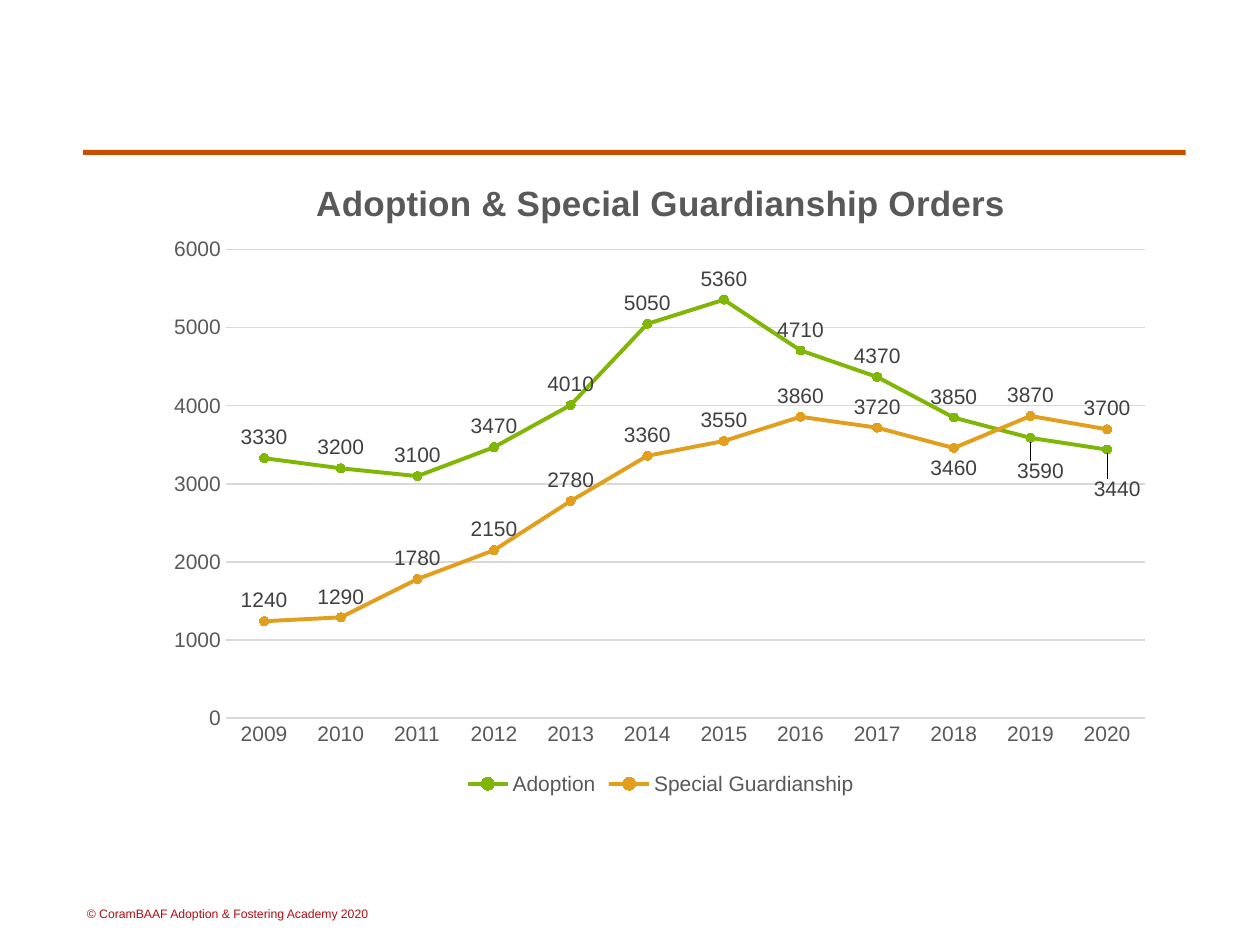
from lxml import etree
from pptx import Presentation
from pptx.chart.data import CategoryChartData
from pptx.dml.color import RGBColor
from pptx.enum.chart import (XL_CHART_TYPE, XL_LABEL_POSITION, XL_LEGEND_POSITION,
                             XL_MARKER_STYLE, XL_TICK_MARK)
from pptx.enum.shapes import MSO_SHAPE
from pptx.oxml.ns import qn
from pptx.util import Inches, Pt

LINE_MARKERS = XL_CHART_TYPE.LINE_MARKERS
ABOVE, BELOW = XL_LABEL_POSITION.ABOVE, XL_LABEL_POSITION.BELOW
LEGEND_BOTTOM = XL_LEGEND_POSITION.BOTTOM
CIRCLE = XL_MARKER_STYLE.CIRCLE
NO_TICKS = XL_TICK_MARK.NONE
RECTANGLE = MSO_SHAPE.RECTANGLE

FONT = "Arial"
COLORS = {"rule": "CA4E00", "copyright": "B20E10", "axis": "595959",
          "grid": "D9D9D9", "label": "404040",
          "Adoption": "80B606", "Special Guardianship": "E29F1D"}

YEARS = [str(year) for year in range(2009, 2021)]
ORDERS = {
    "Adoption": [3330, 3200, 3100, 3470, 4010, 5050,
                 5360, 4710, 4370, 3850, 3590, 3440],
    "Special Guardianship": [1240, 1290, 1780, 2150, 2780, 3360,
                             3550, 3860, 3720, 3460, 3870, 3700],
}
# Labels below the line: year -> (x, y) shift as a share of the chart size
LABELS_BELOW = {
    "Adoption": {"2019": (0.01, 0.02), "2020": (0.01, 0.03)},
    "Special Guardianship": {"2018": None},
}


def rgb(name):
    return RGBColor.from_string(COLORS[name])


def style_font(font, size, color, bold=False):
    font.name, font.size, font.bold = FONT, Pt(size), bold
    font.color.rgb = rgb(color)


def style_line(line, color, width):
    line.color.rgb = rgb(color)
    line.width = Pt(width)


def manual_layout(**values):
    layout = etree.Element(qn("c:layout"))
    manual = etree.SubElement(layout, qn("c:manualLayout"))
    for tag, value in values.items():
        etree.SubElement(manual, qn(f"c:{tag}")).set("val", str(value))
    return layout


def add_rule(slide):
    rule = slide.shapes.add_shape(RECTANGLE, Inches(0.66), Inches(1.19),
                                  Inches(8.75), Inches(0.04))
    rule.shadow.inherit = False
    rule.fill.solid()
    rule.fill.fore_color.rgb = rgb("rule")
    rule.line.fill.background()


def add_copyright(slide):
    box = slide.shapes.add_textbox(Inches(0.69), Inches(7.14), Inches(3.37), Inches(0.36))
    frame = box.text_frame
    frame.word_wrap = True
    frame.margin_left = frame.margin_right = frame.margin_top = frame.margin_bottom = 0
    paragraph = frame.paragraphs[0]
    paragraph.line_spacing = Pt(12)
    run = paragraph.add_run()
    run.text = "© CoramBAAF Adoption & Fostering Academy 2020"
    style_font(run.font, 7, "copyright")


def style_axes(chart):
    years, counts = chart.category_axis, chart.value_axis
    for axis in (years, counts):
        axis.major_tick_mark = axis.minor_tick_mark = NO_TICKS
        style_font(axis.tick_labels.font, 12, "axis")
    style_line(years.format.line, "grid", 0.75)
    counts.format.line.fill.background()
    counts.minimum_scale, counts.maximum_scale, counts.major_unit = 0, 6000, 1000
    style_line(counts.major_gridlines.format.line, "grid", 0.75)


def style_series(series):
    series.smooth = False
    style_line(series.format.line, series.name, 2.25)
    marker = series.marker
    marker.style, marker.size = CIRCLE, 5
    marker.format.fill.solid()
    marker.format.fill.fore_color.rgb = rgb(series.name)
    style_line(marker.format.line, series.name, 0.75)

    labels = series.data_labels
    labels.show_value = True
    labels.position = ABOVE
    style_font(labels.font, 12, "label")
    for year, shift in LABELS_BELOW[series.name].items():
        index = YEARS.index(year)
        label = series.points[index].data_label
        style_font(label.font, 12, "label")
        label.position = BELOW
        if shift:
            idx = series._element.xpath(f"c:dLbls/c:dLbl/c:idx[@val='{index}']")[0]
            idx.addnext(manual_layout(x=shift[0], y=shift[1]))


def add_orders_chart(slide):
    data = CategoryChartData()
    data.categories = YEARS
    for name, values in ORDERS.items():
        data.add_series(name, values)
    chart = slide.shapes.add_chart(LINE_MARKERS, Inches(1.23), Inches(1.23),
                                   Inches(8.03), Inches(5.12), data).chart
    chart.font.name, chart.font.size = FONT, Pt(10)

    # Title and legend
    chart.has_title = True
    title = chart.chart_title.text_frame.paragraphs[0].add_run()
    title.text = "Adoption & Special Guardianship Orders"
    style_font(title.font, 20, "axis", bold=True)
    chart.chart_title.include_in_layout = False
    chart.has_legend = True
    chart.legend.position = LEGEND_BOTTOM
    chart.legend.include_in_layout = False
    style_font(chart.legend.font, 12, "axis")

    # Plot area
    plot_area = chart._chartSpace.chart.plotArea
    for layout in plot_area.findall(qn("c:layout")):
        plot_area.remove(layout)
    plot_area.insert(0, manual_layout(layoutTarget="inner", xMode="edge", yMode="edge",
                                      x=0.07, y=0.147, w=0.909, h=0.726))
    style_axes(chart)
    chart.plots[0].vary_by_categories = False
    for series in chart.plots[0].series:
        style_series(series)


def main():
    presentation = Presentation()
    presentation.slide_width, presentation.slide_height = Inches(10), Inches(7.5)
    slide = presentation.slides.add_slide(presentation.slide_layouts[6])
    add_rule(slide)
    add_copyright(slide)
    add_orders_chart(slide)
    presentation.save("out.pptx")


if __name__ == "__main__":
    main()
